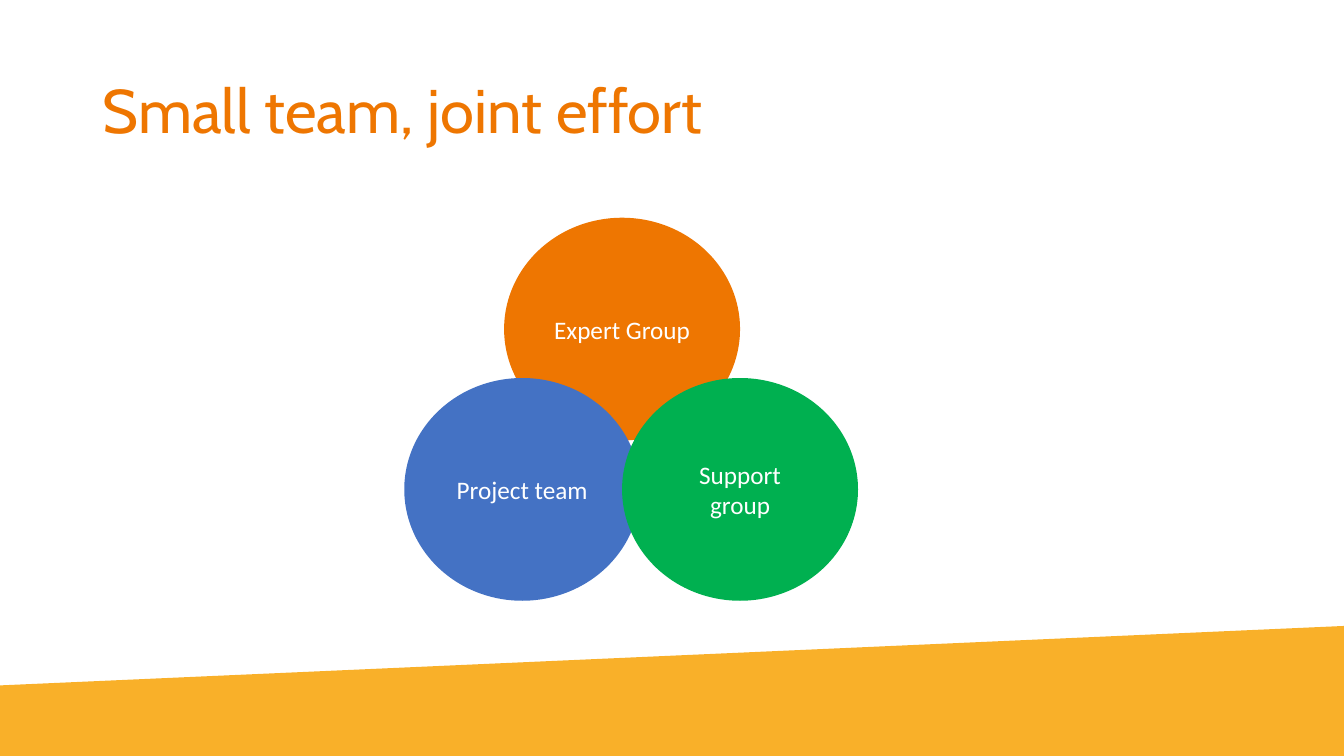
from pptx import Presentation
from pptx.dml.color import RGBColor
from pptx.enum.shapes import MSO_SHAPE
from pptx.enum.text import MSO_ANCHOR, PP_ALIGN
from pptx.util import Inches, Pt

OVAL = MSO_SHAPE.OVAL
MIDDLE = MSO_ANCHOR.MIDDLE
CENTER = PP_ALIGN.CENTER

COLORS = {
    "orange": "EE7601",
    "amber": "F9B029",
    "blue": "4472C4",
    "green": "00B050",
    "white": "FFFFFF",
}
PAGE_WIDTH, PAGE_HEIGHT = 13.33, 7.5
CIRCLE_WIDTH, CIRCLE_HEIGHT = 2.34, 2.21

# Label, colour, and offset from the left and top of the diagram
GROUPS = [
    ("Expert Group", "orange", 0.99, 0),
    ("Project team", "blue", 0, 1.59),
    ("Support group", "green", 2.16, 1.59),
]


def color(name):
    return RGBColor.from_string(COLORS[name])


def paint(shape, fill_name):
    """Give a shape a flat fill without outline or shadow."""
    shape.shadow.inherit = False
    shape.fill.solid()
    shape.fill.fore_color.rgb = color(fill_name)
    shape.line.fill.background()


def write(shape, text, font_name, size, color_name):
    """Set one vertically centred paragraph and return it."""
    frame = shape.text_frame
    frame.word_wrap = True
    frame.vertical_anchor = MIDDLE
    frame.text = text
    para = frame.paragraphs[0]
    para.font.name = font_name
    para.font.size = Pt(size)
    para.font.color.rgb = color(color_name)
    return para


def add_slanted_band(page, left, top, width, height, left_drop):
    """Draw a band whose upper edge starts left_drop below its right end."""
    right, bottom = left + width, top + height
    builder = page.shapes.build_freeform(
        Inches(left), Inches(top + left_drop))
    builder.add_line_segments([
        (Inches(right), Inches(top)),
        (Inches(right), Inches(bottom)),
        (Inches(left), Inches(bottom)),
    ])
    paint(builder.convert_to_shape(), "amber")


def add_title(page, left, top, width, height):
    box = page.shapes.add_textbox(
        Inches(left), Inches(top), Inches(width), Inches(height))
    para = write(box, "Small team, joint effort", "Cabin", 44, "orange")
    para.line_spacing = 0.9


def add_team_circles(page, left, top):
    for label, fill_name, shift_x, shift_y in GROUPS:
        circle = page.shapes.add_shape(
            OVAL, Inches(left + shift_x), Inches(top + shift_y),
            Inches(CIRCLE_WIDTH), Inches(CIRCLE_HEIGHT))
        paint(circle, fill_name)
        write(circle, label, "Calibri", 18, "white").alignment = CENTER


def main():
    deck = Presentation()
    deck.slide_width = Inches(PAGE_WIDTH)
    deck.slide_height = Inches(PAGE_HEIGHT)
    page = deck.slides.add_slide(deck.slide_layouts[6])
    add_slanted_band(page, 0, 6.21, PAGE_WIDTH, PAGE_HEIGHT - 6.21, 0.59)
    add_title(page, 0.92, 0.4, 11.5, 1.45)
    add_team_circles(page, 4.01, 2.16)
    deck.save("out.pptx")


if __name__ == "__main__":
    main()
